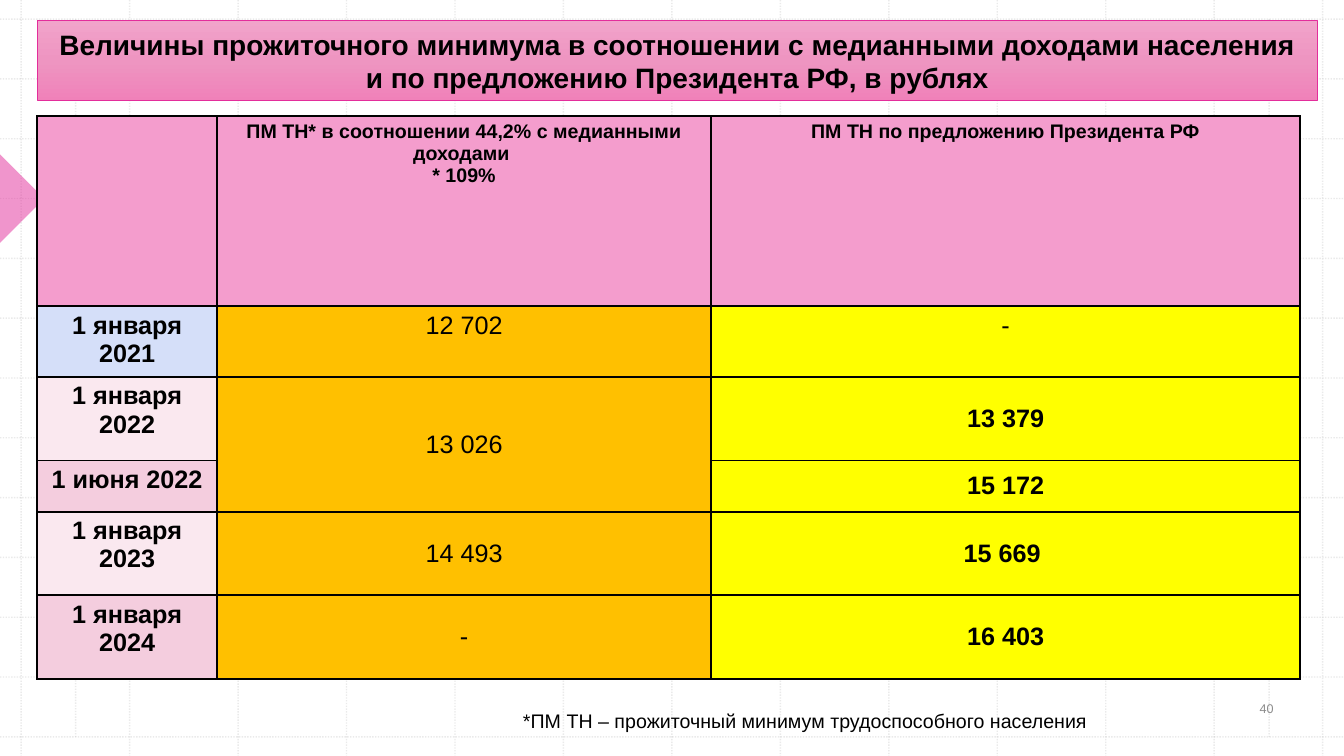
from copy import deepcopy
from dataclasses import dataclass

from lxml import etree
from pptx import Presentation
from pptx.dml.color import RGBColor
from pptx.enum import dml, shapes, text
from pptx.oxml import ns
from pptx.util import Pt


@dataclass(frozen=True)
class Theme:
    font: str = "Arial"
    ink: str = "000000"
    muted: str = "8C8C8C"
    grid: str = "BCBCBC"
    accent: str = "E32D9B"
    banner: tuple = ((0, "F1A3CA"), (0.5, "EE95C1"), (1, "F081B9"))
    header: str = "F49DCD"
    first_date: str = "D5DFF9"
    pale_date: str = "FAE8EF"
    rose_date: str = "F4CDDE"
    median: str = "FFC000"
    proposal: str = "FFFF00"
    title_size: int = 20
    value_size: int = 18
    note_size: int = 14
    number_size: int = 9


THEME = Theme()
CENTER = text.PP_ALIGN.CENTER
MIDDLE = text.MSO_ANCHOR.MIDDLE
TOP = text.MSO_ANCHOR.TOP

HEADINGS = (
    "",
    "ПМ ТН* в соотношении 44,2% с медианными доходами \v* 109%",
    "ПМ ТН по предложению Президента РФ",
)
INCOMES = (
    ("1 января 2021", "12 702", "-", THEME.first_date),
    ("1 января 2022", "13 026", "13 379", THEME.pale_date),
    ("1 июня 2022", "", "15 172", THEME.rose_date),
    ("1 января 2023", "14 493", "15 669 ", THEME.pale_date),
    ("1 января 2024", "-", "16 403", THEME.rose_date),
)
COLUMN_WIDTHS = (128.4, 353, 420.6)
ROW_HEIGHTS = (136, 48, 59.8, 36.6, 59.6, 59.8)


def rgb(color):
    return RGBColor.from_string(color)


def write(frame, words, size, color=THEME.ink, bold=False, align=None, anchor=TOP):
    frame.text = words
    frame.word_wrap = True
    frame.vertical_anchor = anchor
    for paragraph in frame.paragraphs:
        paragraph.alignment = align
        font = paragraph.font
        font.name, font.size, font.bold = THEME.font, Pt(size), bold
        font.color.rgb = rgb(color)


def set_opacity(properties, percent):
    for color in properties.iter(ns.qn("a:srgbClr")):
        etree.SubElement(color, ns.qn("a:alpha")).set("val", str(percent * 1000))


def draw_grid_line(slide, x1, y1, x2, y2):
    grid_line = slide.shapes.add_connector(
        shapes.MSO_CONNECTOR.STRAIGHT, Pt(x1), Pt(y1), Pt(x2), Pt(y2))
    grid_line.line.color.rgb = rgb(THEME.grid)
    grid_line.line.width = Pt(1)
    grid_line.line.dash_style = dml.MSO_LINE.ROUND_DOT
    properties = grid_line._element.spPr
    set_opacity(properties, 30)
    etree.SubElement(properties, ns.qn("a:effectLst"))


def draw_backdrop(slide, left, top, width, height):
    first_x, step_x = left + 15.12, 77.47
    first_y, step_y = top + 13.68, 42.72
    for step in range(13):
        x, y = first_x + step * step_x, first_y + step * step_y
        draw_grid_line(slide, x, top, x, top + height)
        draw_grid_line(slide, left, y, left + width, y)
    for x in (left + 54, left + 906.5):
        draw_grid_line(slide, x, first_y, x, first_y + 12 * step_y)

    side = 44.64
    pointer = slide.shapes.add_shape(
        shapes.MSO_SHAPE.RIGHT_TRIANGLE,
        Pt(left - side / 2), Pt(top + 119.5), Pt(side), Pt(side))
    pointer.rotation = 225
    pointer.shadow.inherit = False
    pointer.fill.solid()
    pointer.fill.fore_color.rgb = rgb(THEME.accent)
    pointer.line.fill.background()
    set_opacity(pointer._element.spPr, 50)


def draw_title(slide, left, top, width, height):
    banner = slide.shapes.add_shape(
        shapes.MSO_SHAPE.RECTANGLE, Pt(left), Pt(top), Pt(width), Pt(height))
    banner.shadow.inherit = False
    banner.fill.gradient()
    banner.fill.gradient_angle = 270
    last_stop = banner._element.spPr.findall(".//" + ns.qn("a:gs"))[-1]
    last_stop.addnext(deepcopy(last_stop))
    for stop, (position, color) in zip(banner.fill.gradient_stops, THEME.banner):
        stop.position = position
        stop.color.rgb = rgb(color)
    banner.line.color.rgb = rgb(THEME.accent)
    banner.line.width = Pt(0.5)
    write(banner.text_frame,
          "Величины прожиточного минимума в соотношении с медианными доходами "
          "населения и по предложению Президента РФ, в рублях",
          THEME.title_size, bold=True, align=CENTER, anchor=MIDDLE)


def set_borders(cell):
    properties = cell._tc.get_or_add_tcPr()
    for index, side in enumerate(("lnL", "lnR", "lnT", "lnB")):
        border = etree.Element(ns.qn("a:" + side), w=str(Pt(1.5)))
        fill = etree.SubElement(border, ns.qn("a:solidFill"))
        etree.SubElement(fill, ns.qn("a:srgbClr"), val=THEME.ink)
        properties.insert(index, border)


def fill_cell(cell, words, size, color, bold, anchor):
    cell.margin_left = cell.margin_right = Pt(9.36)
    cell.margin_top = cell.margin_bottom = Pt(3.6)
    write(cell.text_frame, words, size, bold=bold, align=CENTER)
    cell.vertical_anchor = anchor
    cell.fill.solid()
    cell.fill.fore_color.rgb = rgb(color)
    set_borders(cell)


def draw_incomes(slide, left, top, width, height):
    incomes = slide.shapes.add_table(
        len(ROW_HEIGHTS), len(COLUMN_WIDTHS),
        Pt(left), Pt(top), Pt(width), Pt(height)).table
    incomes.first_row = incomes.horz_banding = False
    for column, share in zip(incomes.columns, COLUMN_WIDTHS):
        column.width = Pt(width * share / sum(COLUMN_WIDTHS))
    for row, share in zip(incomes.rows, ROW_HEIGHTS):
        row.height = Pt(height * share / sum(ROW_HEIGHTS))
    for index, heading in enumerate(HEADINGS):
        fill_cell(incomes.cell(0, index), heading, THEME.note_size,
                  THEME.header, True, TOP)
    for index, (date, median, proposal, date_color) in enumerate(INCOMES, 1):
        anchor = TOP if index == 1 else MIDDLE
        size = THEME.value_size
        fill_cell(incomes.cell(index, 0), date, size, date_color, True, TOP)
        fill_cell(incomes.cell(index, 1), median, size, THEME.median, False, anchor)
        fill_cell(incomes.cell(index, 2), proposal, size, THEME.proposal,
                  index > 1, anchor)
    incomes.cell(2, 1).merge(incomes.cell(3, 1))


def draw_caption(slide, left, top, width, height, words, size, **style):
    caption = slide.shapes.add_textbox(Pt(left), Pt(top), Pt(width), Pt(height))
    write(caption.text_frame, words, size, **style)


def main():
    deck = Presentation()
    deck.slide_width, deck.slide_height = Pt(960), Pt(540)
    slide = deck.slides.add_slide(deck.slide_layouts[6])
    draw_backdrop(slide, 0, 0, 960, 540)
    draw_caption(slide, 866.2, 489.6, 77, 33.1, "40", THEME.number_size,
                 color=THEME.muted, align=CENTER, anchor=MIDDLE)
    draw_incomes(slide, 26.6, 82.8, 902, 399.8)
    draw_caption(slide, 366.5, 502.6, 623.5, 24.5,
                 "*ПМ ТН – прожиточный минимум трудоспособного населения",
                 THEME.note_size)
    draw_title(slide, 26.6, 14.8, 914.4, 57)
    deck.save("out.pptx")


if __name__ == "__main__":
    main()
